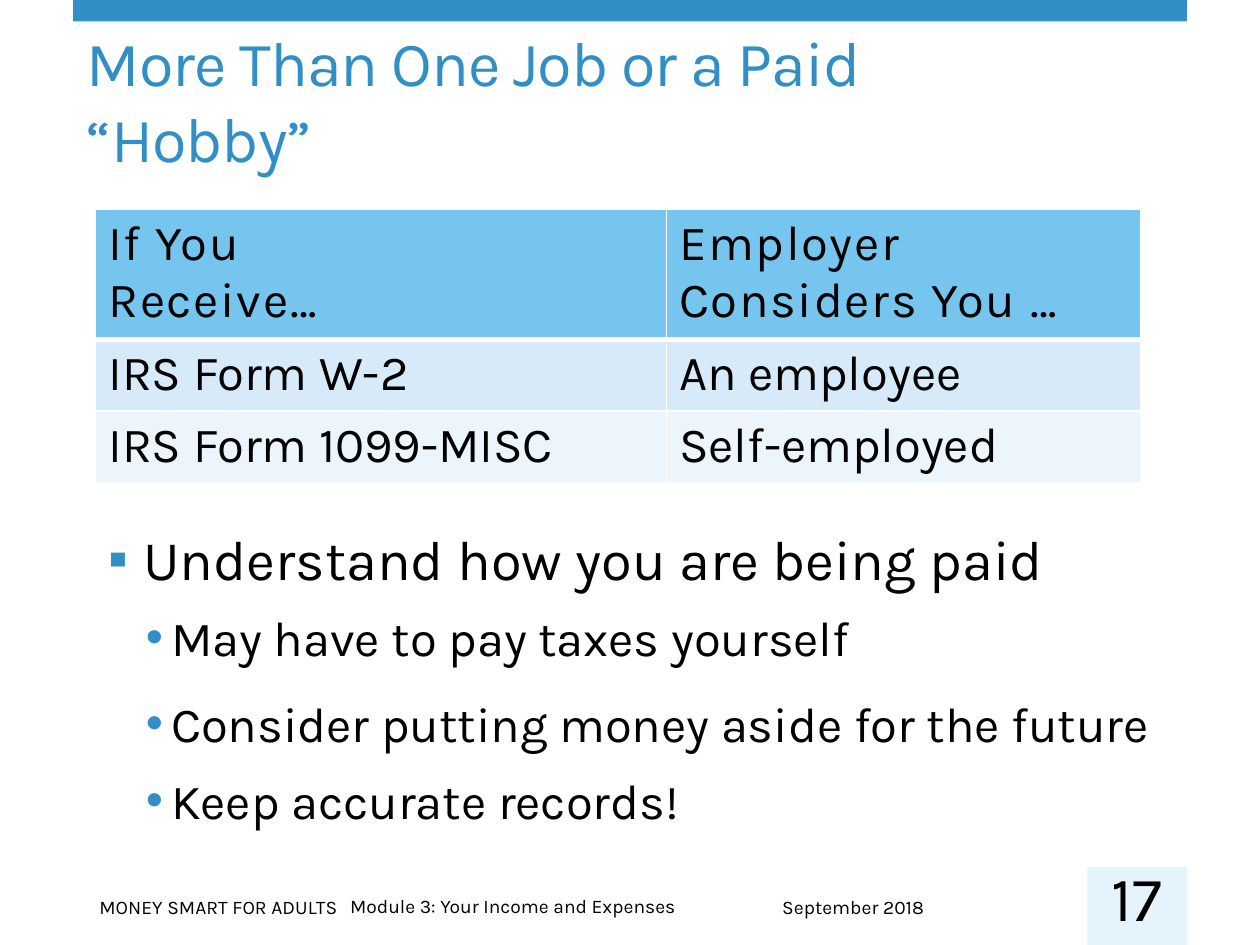
from dataclasses import dataclass

from lxml.etree import SubElement
from pptx import Presentation
from pptx.dml.color import RGBColor
from pptx.enum.shapes import MSO_SHAPE
from pptx.enum.text import MSO_ANCHOR, MSO_AUTO_SIZE, PP_ALIGN
from pptx.oxml.ns import qn
from pptx.util import Inches, Pt


@dataclass(frozen=True)
class Theme:
    font: str = "Karla"
    accent: str = "318FC5"
    ink: str = "000000"
    paper: str = "FFFFFF"
    tile: str = "E4F3FC"
    row_fills: tuple = ("76C5EF", "D6EAF9", "ECF5FC")
    title: int = 36
    lead: int = 32
    text: int = 28
    footer: int = 11


class SlideBuilder:
    def __init__(self, page, theme):
        self.page = page
        self.theme = theme

    def style(self, para, size, color=None, spacing=0):
        for span in para.runs:
            span.font.name = self.theme.font
            span.font.size = Pt(size)
            span.font.bold = False
            span.font.color.rgb = RGBColor.from_string(color or self.theme.ink)
            if spacing:
                span.font._element.set("spc", str(round(spacing * 100)))

    def place(self, shape, area):
        shape.left, shape.top, shape.width, shape.height = map(Inches, area)

    def title(self, text, area):
        shape = self.page.shapes.title
        self.place(shape, area)
        frame = shape.text_frame
        frame.text = text
        frame.word_wrap = True
        frame.auto_size = MSO_AUTO_SIZE.NONE
        frame.vertical_anchor = MSO_ANCHOR.BOTTOM
        para = frame.paragraphs[0]
        para.alignment = PP_ALIGN.LEFT
        self.style(para, self.theme.title, self.theme.accent, -0.6)

    def block(self, area, fill):
        shape = self.page.shapes.add_shape(MSO_SHAPE.RECTANGLE, *map(Inches, area))
        shape.shadow.inherit = False
        shape.fill.solid()
        shape.fill.fore_color.rgb = RGBColor.from_string(fill)
        shape.line.fill.background()

    def label(self, text, area, size, wrap=True):
        box = self.page.shapes.add_textbox(*map(Inches, area))
        frame = box.text_frame
        frame.text = text
        frame.word_wrap = wrap
        self.style(frame.paragraphs[0], size)
        return frame

    def page_number(self, text, area):
        frame = self.label(text, area, self.theme.title)
        frame.margin_left = frame.margin_right = 0
        frame.margin_top = frame.margin_bottom = 0
        frame.vertical_anchor = MSO_ANCHOR.MIDDLE
        frame.paragraphs[0].alignment = PP_ALIGN.CENTER

    def bullet(self, para, symbol, left, hanging):
        properties = para._p.get_or_add_pPr()
        properties.set("marL", str(Inches(left)))
        properties.set("indent", str(-Inches(hanging)))
        color = SubElement(properties, qn("a:buClr"))
        SubElement(color, qn("a:srgbClr"), val=self.theme.accent)
        SubElement(properties, qn("a:buFont"), typeface="Arial")
        SubElement(properties, qn("a:buChar"), char=symbol)

    def bullets(self, items, area):
        box = self.page.shapes.add_textbox(*map(Inches, area))
        frame = box.text_frame
        frame.word_wrap = True
        for index, (text, level, line_spacing, before) in enumerate(items):
            para = frame.paragraphs[0] if index == 0 else frame.add_paragraph()
            para.text = text
            para.level = level
            if level == 0:
                self.bullet(para, "▪", 0.28, 0.28)
            else:
                self.bullet(para, "•", 0.5, 0.2)
            para.line_spacing = line_spacing
            para.space_before = Pt(before)
            self.style(para, self.theme.lead if level == 0 else self.theme.text)

    def border(self, cell, side, width):
        line = SubElement(cell._tc.get_or_add_tcPr(), qn(f"a:ln{side}"), w=str(Pt(width)))
        fill = SubElement(line, qn("a:solidFill"))
        SubElement(fill, qn("a:srgbClr"), val=self.theme.paper)

    def table(self, rows, area, widths, heights):
        shape = self.page.shapes.add_table(len(rows), len(widths), *map(Inches, area))
        table = shape.table
        for column, width in zip(table.columns, widths):
            column.width = Inches(width)
        for r, values in enumerate(rows):
            table.rows[r].height = Inches(heights[r])
            for c, value in enumerate(values):
                cell = table.cell(r, c)
                cell.text_frame.text = value
                self.style(cell.text_frame.paragraphs[0], self.theme.text, spacing=1 if r == 0 else 0)
                for side in "LRTB":
                    header_edge = (r, side) in ((0, "B"), (1, "T"))
                    self.border(cell, side, 3 if header_edge else 1)
                cell.fill.solid()
                cell.fill.fore_color.rgb = RGBColor.from_string(self.theme.row_fills[r])


def main():
    deck = Presentation()
    deck.slide_width, deck.slide_height = Inches(10), Inches(7.5)
    theme = Theme()
    slide = SlideBuilder(deck.slides.add_slide(deck.slide_layouts[5]), theme)

    slide.block((0.58, 0, 8.84, 0.17), theme.accent)
    slide.block((8.63, 6.88, 0.79, 0.62), theme.tile)
    slide.label("Module 3: Your Income and Expenses", (2.68, 7.05, 5.66, 0.29), theme.footer)
    slide.label("September 2018", (6.11, 7.06, 2.52, 0.29), theme.footer)
    slide.label("MONEY SMART FOR ADULTS", (0.69, 7.06, 2.09, 0.29), theme.footer, wrap=False)

    slide.title("More Than One Job or a Paid “Hobby”", (0.59, 0.48, 8.2, 0.96))
    slide.table(
        [
            ("If You\vReceive…", "Employer Considers You …"),
            ("IRS Form W-2", "An employee"),
            ("IRS Form 1099-MISC", "Self-employed"),
        ],
        (0.76, 1.66, 8.29, 2.1),
        (4.53, 3.76),
        (1, 0.55, 0.55),
    )
    slide.bullets(
        [
            ("Understand how you are being paid", 0, 1.1, 0),
            ("May have to pay taxes yourself", 1, 1.1, 5.6),
            ("Consider putting money aside for the future", 1, 1.3, 5.6),
            ("Keep accurate records!", 1, 1.3, 0),
        ],
        (0.76, 4.06, 9, 2.79),
    )
    slide.page_number("17", (8.63, 6.96, 0.79, 0.31))
    deck.save("out.pptx")


if __name__ == "__main__":
    main()
